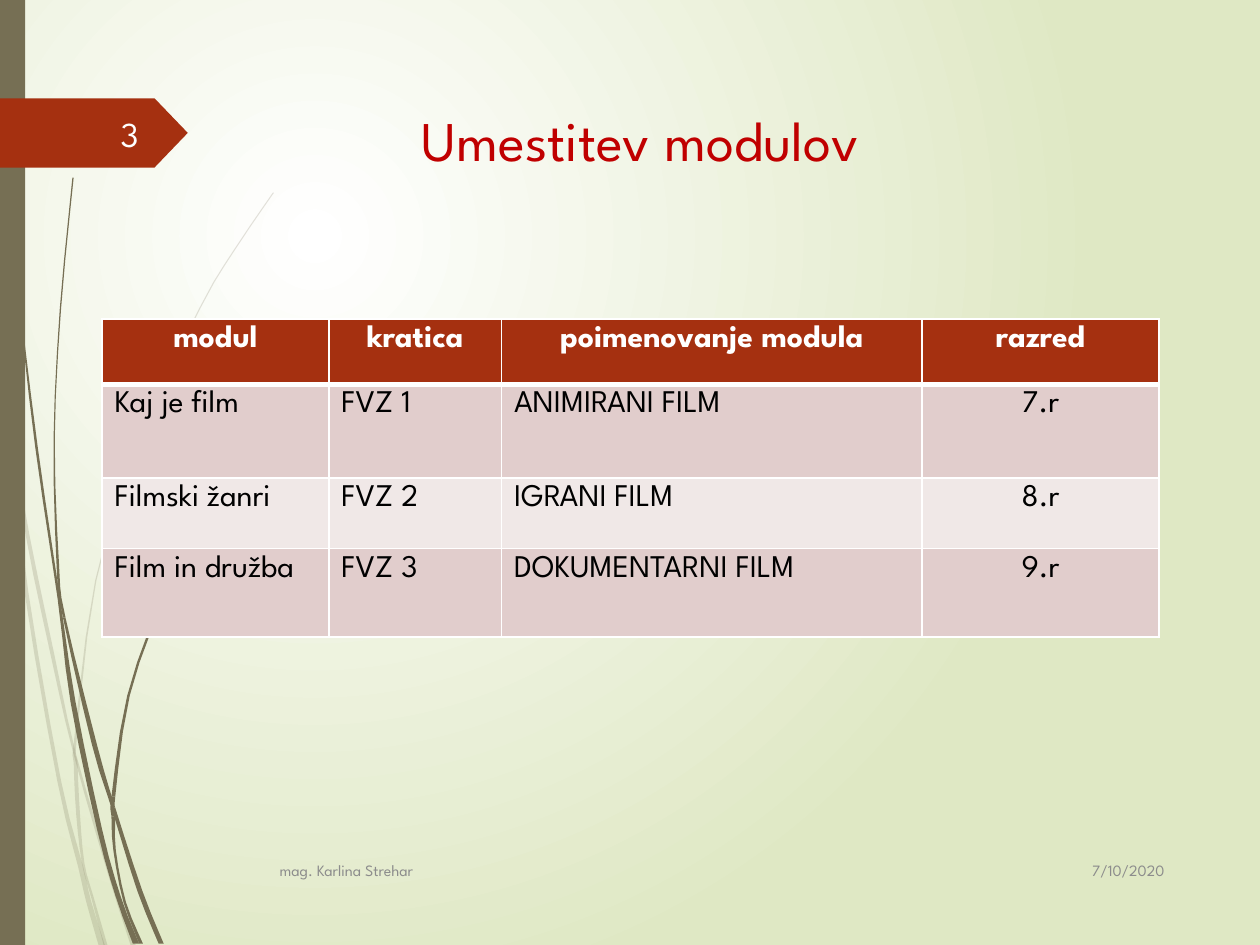
import dataclasses
import pptx
import pptx.util
import pptx.dml.color
import pptx.enum.shapes
import pptx.enum.text
import pptx.oxml
import pptx.oxml.ns

ALIGN = pptx.enum.text.PP_ALIGN
ANCHOR = pptx.enum.text.MSO_ANCHOR
SHAPE = pptx.enum.shapes.MSO_SHAPE
qn = pptx.oxml.ns.qn
NS = pptx.oxml.ns.nsdecls("a")
GRID = pptx.util.Inches(10) // 100
STEPS = 3


@dataclasses.dataclass(frozen=True)
class Theme:
    font: str = "League Spartan"
    glow: str = "FFFFFF"
    meadow: str = "DFE8C4"
    stem: str = "766F54"
    accent: str = "A53010"
    title: str = "C00000"
    light: str = "FEFFFF"
    border: str = "FFFFFF"
    ink: str = "000000"
    muted: str = "8C8C8C"
    bands: tuple = ("E1CDCC", "F0E8E7")
    title_size: int = 32
    number_size: int = 20
    table_size: int = 18
    footer_size: int = 9


THEME = Theme()

PALE_STRANDS = [
    ([(0, 29, 0.2), (0.5, 32, 0.3), (0.8, 35, 0.2), (2.1, 47, 0.3),
      (4.7, 62, 0.3), (6.4, 68.8, 0.4), (7, 71.4, 0.4), (8.1, 75.1, 0.5)],
     (2, 6)),
    ([(1, 34.5, 0), (2.2, 42.5, 0.3), (4.2, 52.1, 0.3), (5.9, 59.7, 0.2),
      (8.7, 69.3, 0.3), (10.6, 75.1, 0.4)], (3,)),
    ([(21.7, 15.3, 0.1), (18.7, 19.7, 0.1), (15.9, 24.4, 0.1),
      (11.1, 34.8, 0.1), (7.6, 46.1, 0.1), (6, 58.6, 0.2), (6, 60.5, 0.3),
      (6.2, 64.6, 0.3), (6.6, 68.5, 0.2), (7.3, 71.1, 0.2),
      (8.4, 75.1, 0.3)], (5, 6, 9)),
]
DARK_STRANDS = [
    ([(0.3, 0, 0.1), (0.6, 11, 0.1), (1.5, 23.3, 0.1), (2.9, 35.5, 0.2),
      (4.7, 47.7, 0.2), (5.8, 55.7, 0.4), (7.9, 65.8, 0.4),
      (9.4, 71.2, 0.4), (10.8, 74.9, 0.5)], (4, 7)),
    ([(5.8, 14.1, 0.1), (4.8, 24.5, 0.1), (4.3, 34.9, 0.1), (4.6, 45, 0.2),
      (5.1, 49, 0.2), (7.5, 59.1, 0.4), (9, 64.1, 0.3),
      (11.1, 70.7, 0.4), (12.8, 74.9, 0.4)], (3, 4, 6)),
    ([(21.6, 34.4, 0.1), (19.1, 37.4, 0.1), (16.9, 40.6, 0.1),
      (13, 47.5, 0.2), (10.2, 55.2, 0.2), (9, 63.2, 0.3), (9, 64.8, 0.3),
      (9.1, 67.5, 0.2), (9.9, 71.6, 0.2), (11.2, 74.9, 0.3)], (5, 6, 8)),
]
COLUMNS = [18, 13.7, 33.4, 18.8]
ROWS = [5.2, 7.45, 5.6, 7]
MODULES = [
    ("modul", "kratica", "poimenovanje modula", "razred"),
    ("Kaj je film", "FVZ 1", "ANIMIRANI FILM", "7.r"),
    ("Filmski žanri", "FVZ 2", "IGRANI FILM", "8.r"),
    ("Film in družba", "FVZ 3", "DOKUMENTARNI FILM", "9.r"),
]


def on_grid(*units):
    return [pptx.util.Emu(round(unit * GRID)) for unit in units]


def rgb(color):
    return pptx.dml.color.RGBColor.from_string(color)


def write(frame, text, size, color, align=ALIGN.LEFT, bold=False):
    frame.text = text
    paragraph = frame.paragraphs[0]
    paragraph.alignment = align
    font = paragraph.runs[0].font
    font.name, font.size, font.bold = THEME.font, pptx.util.Pt(size), bold
    font.color.rgb = rgb(color)


def paint(shape, color, opacity=100):
    shape.shadow.inherit = False
    shape.line.fill.background()
    shape.fill.solid()
    shape.fill.fore_color.rgb = rgb(color)
    if opacity < 100:
        tint = shape.element.spPr.find(".//" + qn("a:srgbClr"))
        tint.append(pptx.oxml.parse_xml(f'<a:alpha {NS} val="{opacity * 1000}"/>'))


def add_background(slide):
    fill = slide.background.fill
    fill.gradient()
    for stop, color in zip(fill.gradient_stops, (THEME.glow, THEME.meadow)):
        stop.color.rgb = rgb(color)
    gradient = slide.element.find(".//" + qn("a:gradFill"))
    gradient.replace(gradient.find(qn("a:lin")), pptx.oxml.parse_xml(
        f'<a:path {NS} path="circle">'
        '<a:fillToRect l="50000" t="50000" r="100000" b="100000"/></a:path>'))


def smooth(knots):
    padded = [knots[0], *knots, knots[-1]]
    for a, b, c, d in zip(padded, padded[1:], padded[2:], padded[3:]):
        for step in range(STEPS):
            t = step / STEPS
            yield tuple(
                q + t * (r - p) / 2 + t**2 * (2 * p - 5 * q + 4 * r - s) / 2
                + t**3 * (3 * q - p - 3 * r + s) / 2
                for p, q, r, s in zip(a, b, c, d))
    yield knots[-1]


def add_strand(slide, knots, joints, opacity):
    curve = list(smooth(knots))
    ends = [0, *joints, len(knots) - 1]
    for start, end in zip(ends, ends[1:]):
        section = curve[start * STEPS:end * STEPS + 1]
        left = [on_grid(x - width / 2, y) for x, y, width in section]
        right = [on_grid(x + width / 2, y) for x, y, width in section]
        outline = left + right[::-1]
        builder = slide.shapes.build_freeform(*outline[0])
        builder.add_line_segments(outline[1:], close=True)
        paint(builder.convert_to_shape(), THEME.stem, opacity)


def add_block(slide, kind, box, color):
    block = slide.shapes.add_shape(kind, *on_grid(*box))
    paint(block, color)
    return block


def add_label(slide, box, text, size, color, align=ALIGN.LEFT):
    frame = slide.shapes.add_textbox(*on_grid(*box)).text_frame
    frame.word_wrap = True
    frame.vertical_anchor = ANCHOR.MIDDLE
    write(frame, text, size, color, align)


def add_title(slide, box, text):
    title = slide.shapes.title
    title.left, title.top, title.width, title.height = on_grid(*box)
    title.text_frame.vertical_anchor = ANCHOR.TOP
    write(title.text_frame, text, THEME.title_size, THEME.title, ALIGN.CENTER)


def set_borders(cell, **widths):
    properties = cell._tc.get_or_add_tcPr()
    for position, side in enumerate("LRTB"):
        width = pptx.util.Pt(widths.get(side, 1))
        properties.insert(position, pptx.oxml.parse_xml(
            f'<a:ln{side} {NS} w="{width}"><a:solidFill>'
            f'<a:srgbClr val="{THEME.border}"/></a:solidFill></a:ln{side}>'))


def style_cell(cell, text, row, column):
    header = row == 0
    centred = header or column == len(COLUMNS) - 1
    cell.fill.solid()
    cell.fill.fore_color.rgb = rgb(
        THEME.accent if header else THEME.bands[(row - 1) % 2])
    set_borders(cell, B=3 if header else 1, T=3 if row == 1 else 1)
    write(cell.text_frame, text, THEME.table_size,
          THEME.border if header else THEME.ink,
          ALIGN.CENTER if centred else ALIGN.LEFT, header)


def add_modules(slide, left, top):
    box = on_grid(left, top, sum(COLUMNS), sum(ROWS))
    table = slide.shapes.add_table(len(ROWS), len(COLUMNS), *box).table
    for column, width in zip(table.columns, on_grid(*COLUMNS)):
        column.width = width
    for row, height in zip(table.rows, on_grid(*ROWS)):
        row.height = height
    for r, entries in enumerate(MODULES):
        for c, text in enumerate(entries):
            style_cell(table.cell(r, c), text, r, c)


def main():
    deck = pptx.Presentation()
    deck.slide_width, deck.slide_height = on_grid(100, 75)
    slide = deck.slides.add_slide(deck.slide_layouts[5])
    add_background(slide)
    for strands, opacity in ((PALE_STRANDS, 20), (DARK_STRANDS, 100)):
        for knots, joints in strands:
            add_strand(slide, knots, joints, opacity)
    add_block(slide, SHAPE.RECTANGLE, (0, 0, 2, 75), THEME.stem)
    flag = add_block(slide, SHAPE.PENTAGON, (0, 7.8, 14.9, 5.5), THEME.accent)
    flag.adjustments[0] = 0.48
    add_modules(slide, 8.1, 25.3)
    add_title(slide, (14.8, 7.9, 72.1, 14), "Umestitev modulov")
    add_label(slide, (85, 67.1, 8.4, 4), "7/10/2020",
              THEME.footer_size, THEME.muted, ALIGN.RIGHT)
    add_label(slide, (21.2, 67.1, 62.5, 4), "mag. Karlina Strehar",
              THEME.footer_size, THEME.muted)
    add_label(slide, (5.6, 8.6, 6.4, 4), "3",
              THEME.number_size, THEME.light, ALIGN.RIGHT)
    deck.save("out.pptx")


if __name__ == "__main__":
    main()
